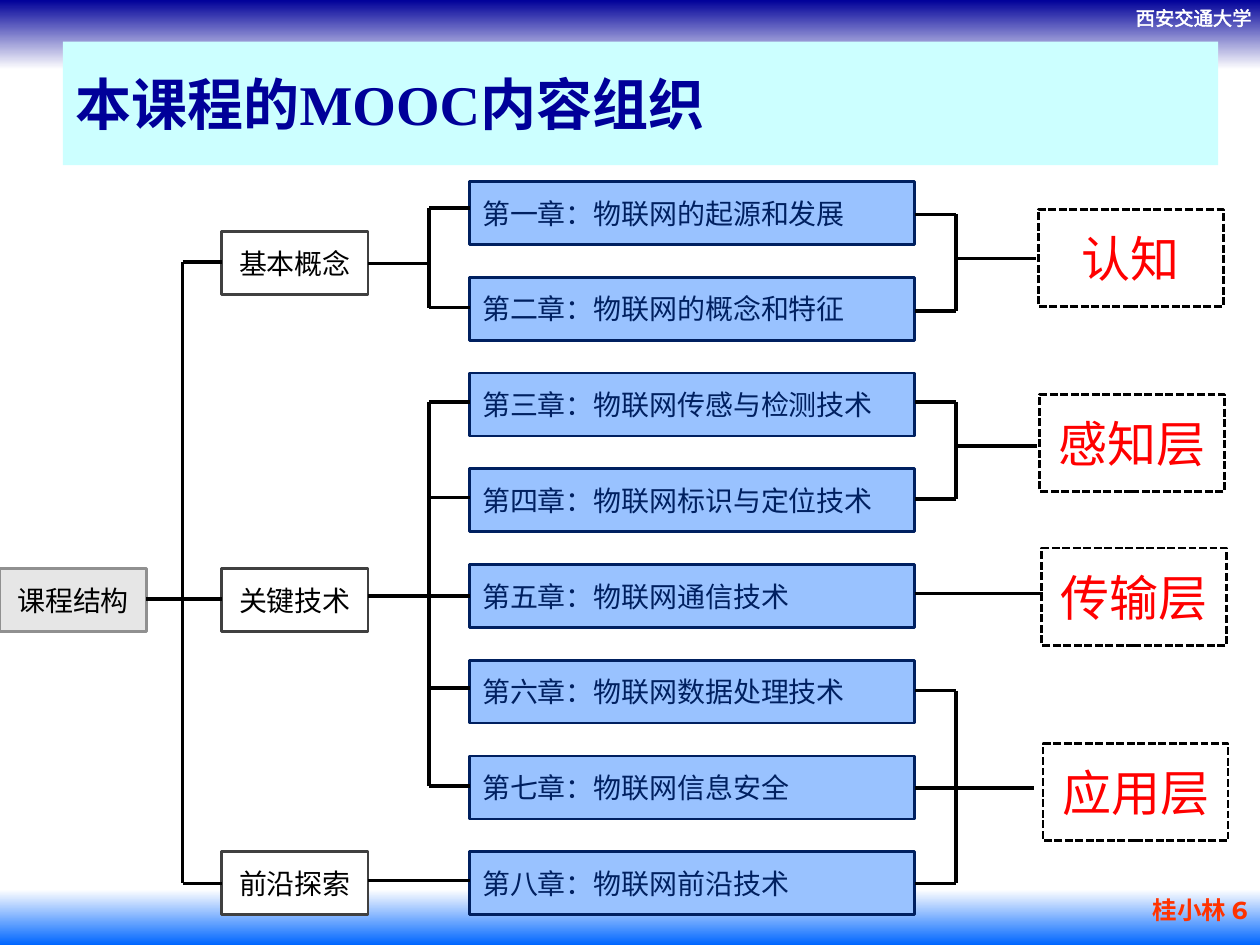
"""Build the course structure slide with its chapter tree and layer labels."""
import pptx
import pptx.util
import pptx.dml.color
import pptx.enum.dml
import pptx.enum.shapes
import pptx.enum.text
import pptx.oxml
import pptx.oxml.ns

Cm = pptx.util.Cm
Pt = pptx.util.Pt
RGBColor = pptx.dml.color.RGBColor
ALIGN = pptx.enum.text.PP_ALIGN
ANCHOR = pptx.enum.text.MSO_ANCHOR

BLACK = RGBColor(0x00, 0x00, 0x00)
WHITE = RGBColor(0xFF, 0xFF, 0xFF)
NAVY = RGBColor(0x00, 0x00, 0x99)
BRIGHT_BLUE = RGBColor(0x00, 0x66, 0xFF)
PALE_CYAN = RGBColor(0xCC, 0xFF, 0xFF)
CHAPTER_FILL = RGBColor(0x99, 0xC2, 0xFF)
CHAPTER_INK = RGBColor(0x00, 0x20, 0x60)
TOPIC_EDGE = RGBColor(0x40, 0x40, 0x40)
ROOT_FILL = RGBColor(0xE6, 0xE6, 0xE6)
ROOT_EDGE = RGBColor(0x90, 0x90, 0x90)
RED = RGBColor(0xFF, 0x00, 0x00)
ORANGE = RGBColor(0xFF, 0x33, 0x00)

SANS = "Noto Sans CJK SC"
SERIF = "Times New Roman"

SLIDE_WIDTH, SLIDE_HEIGHT = 25.4, 19.05
BOX_HEIGHT, TOPIC_WIDTH = 1.27, 2.95
TOPIC_LEFT = 4.47
CHAPTER_LEFT, CHAPTER_TOP, CHAPTER_WIDTH, CHAPTER_STEP = 9.47, 3.66, 8.97, 1.93
CHAPTER_RIGHT = CHAPTER_LEFT + CHAPTER_WIDTH
LAYER_WIDTH, LAYER_HEIGHT = 3.73, 1.96
TOPIC_TRUNK, CHAPTER_TRUNK, LAYER_TRUNK = 3.68, 8.65, 19.27

UNIVERSITY = "西安交通大学"
TITLE = "本课程的MOOC内容组织"
AUTHOR_AND_PAGE = "桂小林 6"
ROOT = ("课程结构", 11.46)
TOPICS = [("基本概念", 4.67), ("关键技术", 11.46), ("前沿探索", 17.17)]
CHAPTERS = [
    "第一章：物联网的起源和发展",
    "第二章：物联网的概念和特征",
    "第三章：物联网传感与检测技术",
    "第四章：物联网标识与定位技术",
    "第五章：物联网通信技术",
    "第六章：物联网数据处理技术",
    "第七章：物联网信息安全",
    "第八章：物联网前沿技术",
]
LAYERS = [("认知", 20.93, 4.22), ("感知层", 20.96, 7.95),
          ("传输层", 21, 11.05), ("应用层", 21.03, 14.99)]
BRACKETS = [
    (TOPIC_TRUNK, TOPIC_LEFT, [5.28, 17.81]),
    (CHAPTER_TRUNK, CHAPTER_LEFT, [4.19, 6.2]),
    (CHAPTER_TRUNK, CHAPTER_LEFT, [8.1, 10.03, 12.01, 13.87, 15.85]),
    (LAYER_TRUNK, CHAPTER_RIGHT, [4.32, 6.27]),
    (LAYER_TRUNK, CHAPTER_RIGHT, [8.1, 10.06]),
    (LAYER_TRUNK, CHAPTER_RIGHT, [13.92, 15.88, 17.81]),
]
STEMS = [
    (TOPIC_WIDTH, TOPIC_LEFT, 12.07),
    (TOPIC_LEFT + TOPIC_WIDTH, CHAPTER_TRUNK, 5.31),
    (TOPIC_LEFT + TOPIC_WIDTH, CHAPTER_TRUNK, 12.01),
    (TOPIC_LEFT + TOPIC_WIDTH, CHAPTER_LEFT, 17.75),
    (LAYER_TRUNK, 20.88, 5.21),
    (LAYER_TRUNK, 20.9, 8.99),
    (CHAPTER_RIGHT, 21.03, 11.96),
    (LAYER_TRUNK, 20.85, 15.88),
]


def write(shape, text, size, color, font=SANS, align=ALIGN.CENTER,
          anchor=ANCHOR.MIDDLE, bold=False, wrap=True):
    """Put one formatted line of text into a shape."""
    frame = shape.text_frame
    frame.text = text
    frame.word_wrap = wrap
    frame.vertical_anchor = anchor
    paragraph = frame.paragraphs[0]
    paragraph.alignment = align
    run = paragraph.runs[0]
    run.font.size = Pt(size)
    run.font.bold = bold
    run.font.color.rgb = color
    run.font.name = font
    east_asian = pptx.oxml.parse_xml(
        f'<a:ea {pptx.oxml.ns.nsdecls("a")} typeface="{SANS}"/>')
    run.font._element.append(east_asian)
    return run


def add_box(slide, left, top, width, height, fill=None, edge=None):
    """Add a rectangle with an optional fill and edge."""
    box = slide.shapes.add_shape(pptx.enum.shapes.MSO_SHAPE.RECTANGLE,
                                 Cm(left), Cm(top), Cm(width), Cm(height))
    box.shadow.inherit = False
    if fill is None:
        box.fill.background()
    else:
        box.fill.solid()
        box.fill.fore_color.rgb = fill
    if edge is None:
        box.line.fill.background()
    else:
        box.line.color.rgb = edge
        box.line.width = Pt(1.5)
    return box


def add_band(slide, top, height, upper, lower):
    """Add a full-width band that fades downwards."""
    band = add_box(slide, 0, top, SLIDE_WIDTH, height)
    band.fill.gradient()
    band.fill.gradient_angle = 270
    for stop, color in zip(band.fill.gradient_stops, (upper, lower)):
        stop.color.rgb = color


def add_line(slide, x1, y1, x2, y2):
    """Add a straight black line without a shadow."""
    line = slide.shapes.add_connector(pptx.enum.shapes.MSO_CONNECTOR.STRAIGHT,
                                      Cm(x1), Cm(y1), Cm(x2), Cm(y2))
    line.line.color.rgb = BLACK
    line.line.width = Pt(2)
    line._element.spPr.append(pptx.oxml.parse_xml(
        f'<a:effectLst {pptx.oxml.ns.nsdecls("a")}/>'))


def add_header_and_footer(slide):
    """Add the bands, university name and title."""
    add_band(slide, 0, 1.4, NAVY, WHITE)
    add_band(slide, 17.93, 1.12, WHITE, BRIGHT_BLUE)
    university = slide.shapes.add_textbox(Cm(22.63), Cm(0), Cm(2.87), Cm(0.74))
    name = write(university, UNIVERSITY, 11, WHITE, SERIF,
                 anchor=ANCHOR.TOP, wrap=False)
    name.font._element.insert(0, pptx.oxml.parse_xml(
        f'<a:ln {pptx.oxml.ns.nsdecls("a")} w="18415"><a:solidFill>'
        f'<a:srgbClr val="{WHITE}"/></a:solidFill></a:ln>'))
    title = add_box(slide, 1.27, 0.84, 23.29, 2.49, PALE_CYAN)
    write(title, TITLE, 32, NAVY, SERIF, ALIGN.LEFT, bold=True)


def add_tree(slide):
    """Add the topics, chapters, layers and the lines that join them."""
    for topic, top in TOPICS:
        box = add_box(slide, TOPIC_LEFT, top, TOPIC_WIDTH, BOX_HEIGHT, WHITE, TOPIC_EDGE)
        write(box, topic, 16, BLACK)
    root, root_top = ROOT
    box = add_box(slide, 0, root_top, TOPIC_WIDTH, BOX_HEIGHT, ROOT_FILL, ROOT_EDGE)
    write(box, root, 16, BLACK)
    for row, chapter in enumerate(CHAPTERS):
        box = add_box(slide, CHAPTER_LEFT, CHAPTER_TOP + row * CHAPTER_STEP,
                      CHAPTER_WIDTH, BOX_HEIGHT, CHAPTER_FILL, CHAPTER_INK)
        write(box, chapter, 16, CHAPTER_INK, align=ALIGN.JUSTIFY)
    for trunk, branch_end, levels in BRACKETS:
        add_line(slide, trunk, levels[0], trunk, levels[-1])
        for level in levels:
            add_line(slide, trunk, level, branch_end, level)
    for start, end, level in STEMS:
        add_line(slide, start, level, end, level)
    for layer, left, top in LAYERS:
        box = add_box(slide, left, top, LAYER_WIDTH, LAYER_HEIGHT, edge=BLACK)
        box.line.dash_style = pptx.enum.dml.MSO_LINE.SQUARE_DOT
        write(box, layer, 28, RED)


def main():
    """Assemble and save the slide."""
    deck = pptx.Presentation()
    deck.slide_width, deck.slide_height = Cm(SLIDE_WIDTH), Cm(SLIDE_HEIGHT)
    slide = deck.slides.add_slide(deck.slide_layouts[6])
    add_header_and_footer(slide)
    add_tree(slide)
    author = slide.shapes.add_textbox(Cm(18.49), Cm(17.91), Cm(6.91), Cm(1.27))
    write(author, AUTHOR_AND_PAGE, 14, ORANGE, "Montserrat", ALIGN.RIGHT,
          ANCHOR.TOP, bold=True)
    deck.save("out.pptx")


if __name__ == "__main__":
    main()
